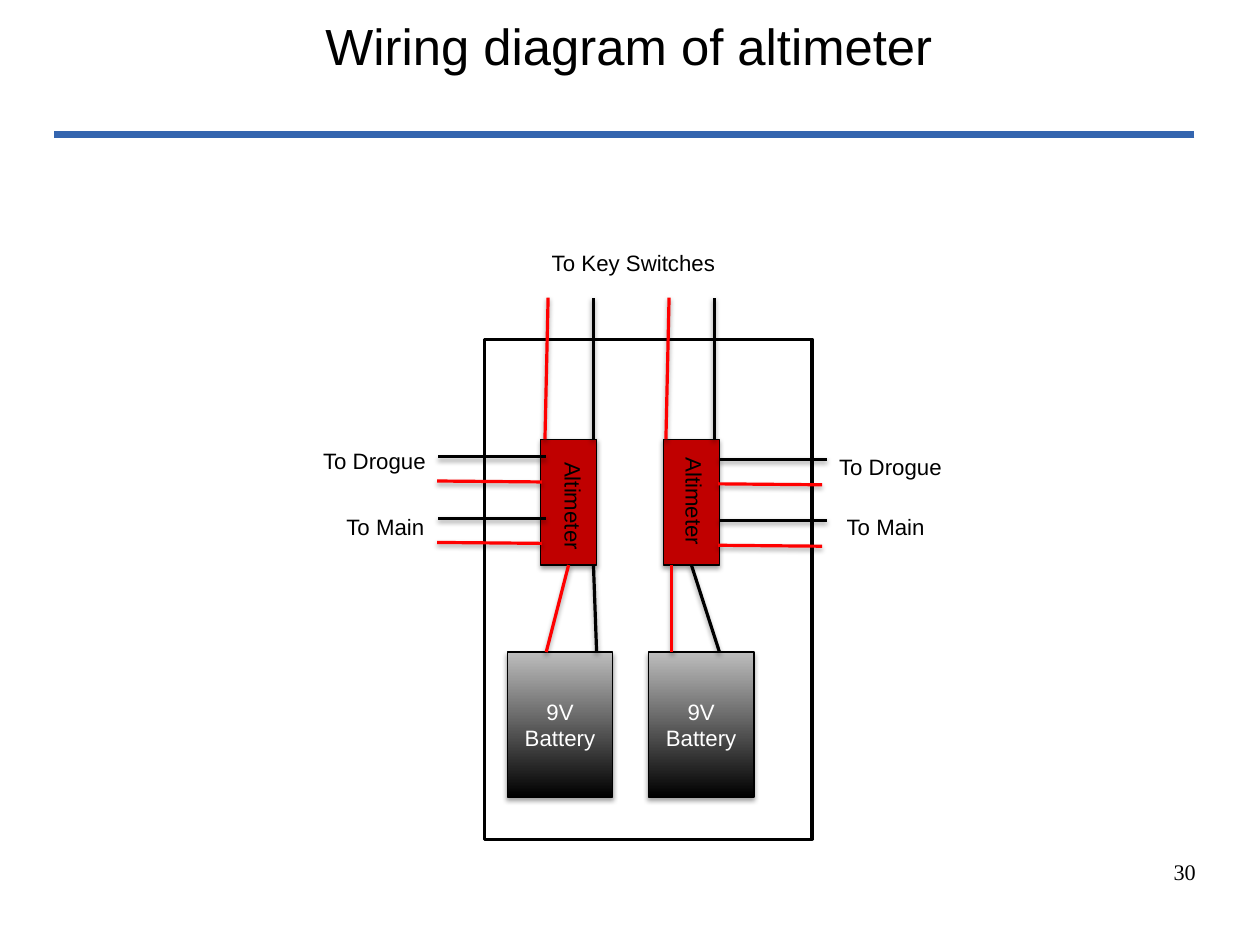
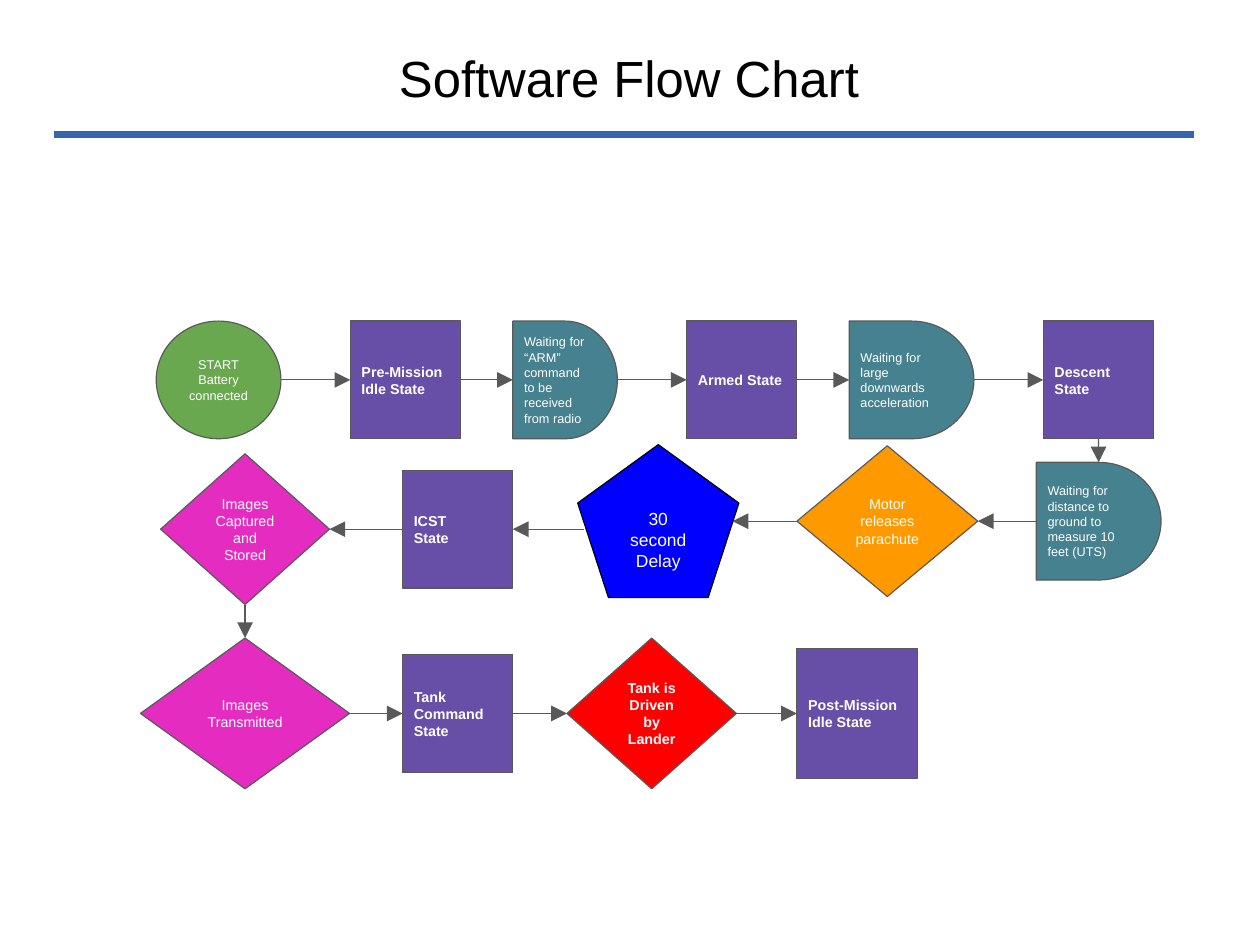
"""Two rocketry slides: an altimeter wiring diagram and a software flow chart."""
from itertools import pairwise

from lxml.etree import SubElement
from pptx import Presentation
from pptx.dml.color import RGBColor
from pptx.enum.shapes import MSO_CONNECTOR, MSO_SHAPE
from pptx.enum.text import MSO_ANCHOR, PP_ALIGN
from pptx.oxml.ns import qn
from pptx.util import Cm, Pt

COLORS = {
    "black": "000000", "white": "FFFFFF", "rule": "3465AF", "red": "FF0000",
    "altimeter": "C00000", "battery": "BDBDBD", "outline": "595959",
    "start": "6AA84F", "state": "674EA7", "wait": "45818E", "motor": "FF9900",
    "image": "E52CC1", "timer": "0000FF",
}
RGB = {name: RGBColor.from_string(value) for name, value in COLORS.items()}
LEFT, CENTER, RIGHT = PP_ALIGN.LEFT, PP_ALIGN.CENTER, PP_ALIGN.RIGHT

deck = Presentation()
deck.slide_width, deck.slide_height = Cm(28), Cm(21)
COLUMN, ROW = deck.slide_width / 100, deck.slide_height / 100


def add_box(slide, kind, left, top, width, height, text="", size=14, color="black",
            align=LEFT, fill=None, outline="black", weight=0.75, bold=False, font="Arial"):
    """Add a preset shape, or a text box when kind is None, on the 100 by 100 grid."""
    frame = [int(v) for v in (left * COLUMN, top * ROW, width * COLUMN, height * ROW)]
    if kind is None:
        box = slide.shapes.add_textbox(*frame)
    else:
        box = slide.shapes.add_shape(kind, *frame)
        box.shadow.inherit = False
        box.fill.solid()
        box.fill.fore_color.rgb = RGB[fill]
        box.line.color.rgb = RGB[outline]
        box.line.width = Pt(weight)
        box.text_frame.vertical_anchor = MSO_ANCHOR.MIDDLE
    if text:
        box.text_frame.word_wrap = True
        box.text_frame.text = text
        for paragraph in box.text_frame.paragraphs:
            paragraph.alignment = align
            paragraph.font.name = font
            paragraph.font.size = Pt(size)
            paragraph.font.bold = bold
            paragraph.font.color.rgb = RGB[color]
    return box


def add_wire(slide, x1, y1, x2, y2, color, weight=2):
    """Add a straight line between two points of the 100 by 100 grid."""
    wire = slide.shapes.add_connector(
        MSO_CONNECTOR.STRAIGHT, int(x1 * COLUMN), int(y1 * ROW), int(x2 * COLUMN), int(y2 * ROW))
    wire.line.color.rgb = RGB[color]
    wire.line.width = Pt(weight)
    SubElement(wire._element.spPr, qn("a:effectLst"))
    return wire


slides = []
for title, title_top in (("Wiring diagram of altimeter", 0.8), ("Software Flow Chart", 4.1)):
    slide = deck.slides.add_slide(deck.slide_layouts[6])
    add_wire(slide, 94.8, 14.2, 4.25, 14.2, "rule", 4.31)
    heading = add_box(slide, None, 4.95, title_top, 90, 8.7, title, 32, align=CENTER)
    heading.text_frame.vertical_anchor = MSO_ANCHOR.MIDDLE
    heading.text_frame.paragraphs[0].line_spacing = 0.94
    slides.append(slide)
wiring, flow = slides

add_box(wiring, None, 72.6, 90.25, 23.2, 6.8, "30", align=RIGHT, font="Times New Roman")
add_box(wiring, MSO_SHAPE.RECTANGLE, 38.45, 35.9, 26, 52.9, fill="white", weight=2)

ALTIMETER_TOP, ALTIMETER_BOTTOM, BATTERY_TOP = 46.5, 59.8, 69
components, altimeters = [], []
for battery_left, altimeter_left in ((40.25, 42.9), (51.45, 52.65)):
    battery = add_box(wiring, MSO_SHAPE.RECTANGLE, battery_left, BATTERY_TOP, 8.4, 15.35,
                      "9V Battery", color="white", align=CENTER, fill="black")
    battery.fill.gradient()
    battery.fill.gradient_angle = 90
    for stop, shade in zip(battery.fill.gradient_stops, ("black", "battery")):
        stop.color.rgb = RGB[shade]
    altimeter = add_box(wiring, MSO_SHAPE.RECTANGLE, altimeter_left, ALTIMETER_TOP, 4.45,
                        ALTIMETER_BOTTOM - ALTIMETER_TOP, fill="altimeter")
    altimeters.append(altimeter)
    components += [battery, altimeter]

leads = []
for battery_x, altimeter_x, color in (
        (43.35, 45.1, "red"), (57.1, 54.9, "black"), (47.35, 47.1, "black"), (53.3, 53.3, "red")):
    leads.append(add_wire(wiring, battery_x, BATTERY_TOP, altimeter_x, ALTIMETER_BOTTOM, color))
for lead, altimeter in zip(leads, altimeters):
    lead.end_connect(altimeter, 2)

for shift in (0, 9.6):
    leads.append(add_wire(wiring, 47.1 + shift, ALTIMETER_TOP, 47.1 + shift, 31.5, "black"))
    leads.append(add_wire(wiring, 43.25 + shift, ALTIMETER_TOP, 43.5 + shift, 31.5, "red"))

for drop in (0, 6.5):
    for outer_x, inner_x, outer_y, inner_y, color in (
            (34.8, 43.3, 48.35, 48.35, "black"), (34.7, 43, 50.9, 51, "red"),
            (65.6, 57.1, 48.6, 48.6, "black"), (65.25, 57, 51.3, 51.2, "red")):
        leads.append(add_wire(wiring, outer_x, outer_y + drop, inner_x, inner_y + drop, color))

for part in components + leads:
    shadow = SubElement(part._element.spPr.find(qn("a:effectLst")), qn("a:outerShdw"),
                        blurRad=str(Pt(3.1)), dist=str(Pt(1.7)), dir="5400000", rotWithShape="0")
    tint = SubElement(shadow, qn("a:srgbClr"), val=COLORS["black"])
    SubElement(tint, qn("a:alpha"), val="36000")

for text, left, top, width, turn in (
        ("Altimeter", 40.3, 52.55, 10.35, 90), ("Altimeter", 49.9, 52.05, 10.35, 90),
        ("To Main", 26.6, 53.7, 10.8, 0), ("To Main", 66.3, 53.7, 10.8, 0),
        ("To Drogue", 24.75, 46.7, 10.8, 0), ("To Drogue", 65.7, 47.35, 10.8, 0),
        ("To Key Switches", 42.9, 25.75, 16.6, 0)):
    add_box(wiring, None, left, top, width, 4.1, text).rotation = turn

STYLES = {
    "start": (MSO_SHAPE.OVAL, "start", 8, False, CENTER),
    "state": (MSO_SHAPE.RECTANGLE, "state", 9, True, LEFT),
    "wait": (MSO_SHAPE.FLOWCHART_DELAY, "wait", 8, False, LEFT),
    "motor": (MSO_SHAPE.DIAMOND, "motor", 9, False, CENTER),
    "timer": (MSO_SHAPE.REGULAR_PENTAGON, "timer", 11, False, CENTER),
    "image": (MSO_SHAPE.DIAMOND, "image", 9, False, CENTER),
    "drive": (MSO_SHAPE.DIAMOND, "red", 9, True, CENTER),
}
STEPS = [
    ("start", 12.4, 40.2, 9.9, 12.45, "START\nBattery\nconnected"),
    ("state", 27.8, 40.2, 8.75, 12.45, "Pre-Mission Idle State"),
    ("wait", 40.7, 40.2, 8.3, 12.45, "Waiting for “ARM” command to be received from radio"),
    ("state", 54.5, 40.2, 8.75, 12.45, "Armed State"),
    ("wait", 67.4, 40.2, 9.9, 12.45, "Waiting for large downwards acceleration"),
    ("state", 82.8, 40.2, 8.75, 12.45, "Descent State"),
    ("wait", 82.25, 55.15, 9.9, 12.45, "Waiting for distance to ground to measure 10 feet (UTS)"),
    ("motor", 63.25, 55.15, 14.35, 15.95, "Motor releases parachute"),
    ("timer", 45.85, 55.15, 12.8, 16.2, "30 second Delay"),
    ("state", 31.95, 56, 8.75, 12.45, "ICST\nState"),
    ("image", 12.75, 56, 13.4, 15.95, "Images Captured and Stored"),
    ("image", 11.15, 75.5, 16.6, 15.95, "Images Transmitted"),
    ("state", 31.95, 75.5, 8.75, 12.45, "Tank\nCommand State"),
    ("drive", 45, 75.5, 13.45, 15.95, "Tank is Driven by Lander"),
    ("state", 63.25, 75.5, 9.55, 13.8, "Post-Mission Idle State"),
]
steps = []
for style, left, middle, width, height, text in STEPS:
    kind, fill, size, bold, align = STYLES[style]
    steps.append(add_box(flow, kind, left, middle - height / 2, width, height, text, size, "white",
                         align, fill, "black" if style == "timer" else "outline", bold=bold))

TOP_SIDE, LEFT_SIDE, BOTTOM_SIDE, RIGHT_SIDE = range(4)
EXITS = [RIGHT_SIDE] * 5 + [BOTTOM_SIDE] + [LEFT_SIDE] * 4 + [BOTTOM_SIDE] + [RIGHT_SIDE] * 3
UNJOINED_INSETS = {MSO_SHAPE.OVAL: 0, MSO_SHAPE.REGULAR_PENTAGON: 0.04}
for (source, target), exit_side in zip(pairwise(steps), EXITS):
    entry_side = (exit_side + 2) % 4
    ends = []
    for step, side in ((source, exit_side), (target, entry_side)):
        inset = UNJOINED_INSETS.get(step.auto_shape_type, 0)
        share = {LEFT_SIDE: inset, RIGHT_SIDE: 1 - inset}.get(side, 0.5)
        ends.append((step.left + share * step.width) / COLUMN)
    guide = target if source.auto_shape_type in UNJOINED_INSETS else source
    level = (guide.top + guide.height / 2) / ROW
    arrow = add_wire(flow, ends[0], level, ends[1], level, "outline", 0.75)
    if source.auto_shape_type not in UNJOINED_INSETS:
        arrow.begin_connect(source, exit_side)
    if target.auto_shape_type not in UNJOINED_INSETS:
        arrow.end_connect(target, entry_side)
    SubElement(arrow.line._get_or_add_ln(), qn("a:tailEnd"), type="triangle", w="lg", len="lg")

deck.save("out.pptx")
